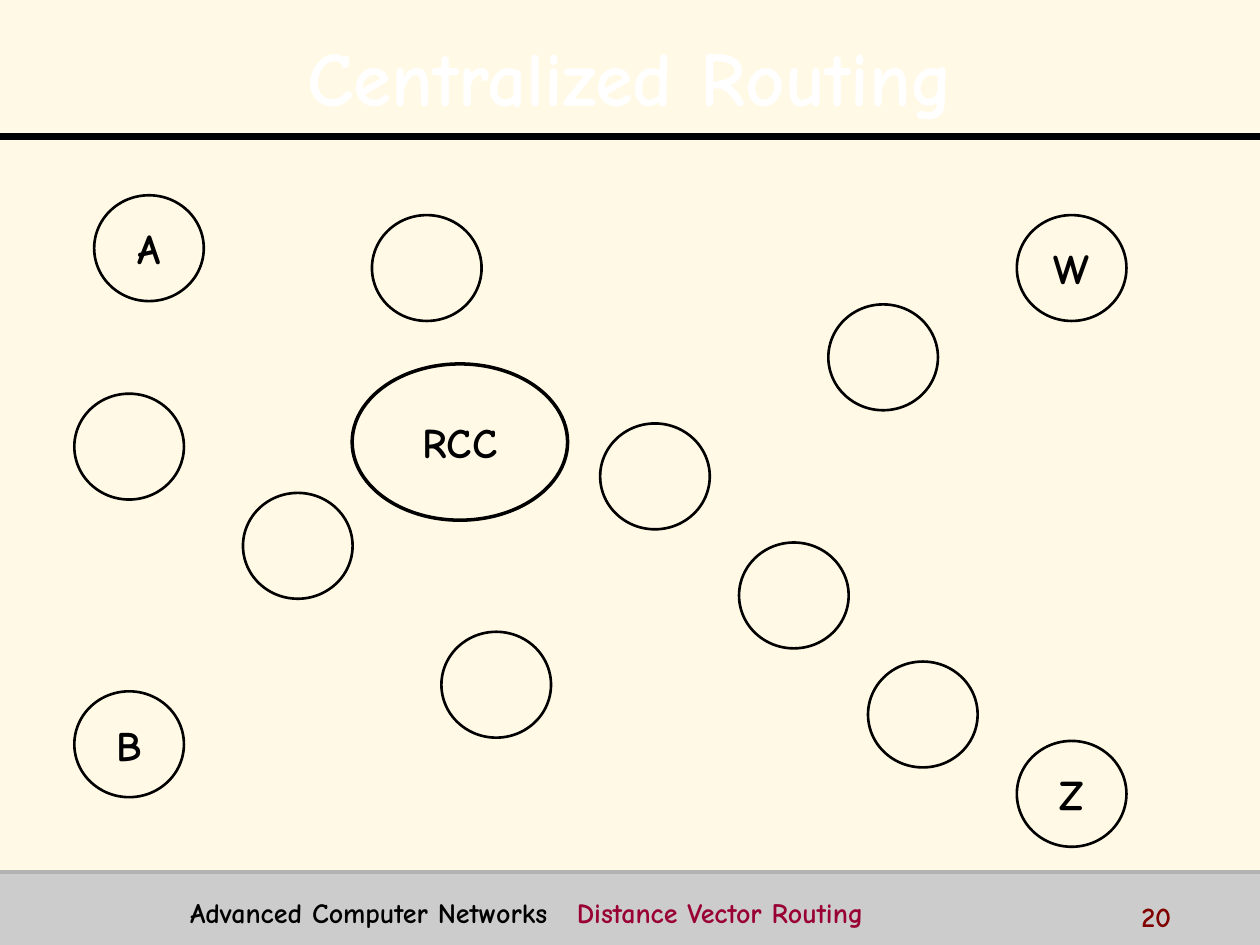
"""Build the Centralized Routing slide."""
from lxml import etree
from pptx import Presentation
from pptx.dml.color import RGBColor
from pptx.enum.shapes import MSO_CONNECTOR, MSO_SHAPE
from pptx.enum.text import MSO_ANCHOR, PP_ALIGN
from pptx.oxml.ns import qn
from pptx.util import Inches, Pt

OVAL, RECT = MSO_SHAPE.OVAL, MSO_SHAPE.RECTANGLE
LINE = MSO_CONNECTOR.STRAIGHT
MID, MIDDLE = PP_ALIGN.CENTER, MSO_ANCHOR.MIDDLE

WIDE, HIGH = 10, 7.5
STEP = WIDE / 127
LEFT, TOP = 0.59, 1.55
FONT = "Comic Neue"
COLORS = {
    "back": "FFF9E6", "band": "CCCCCC", "edge": "B2B2B2", "ink": "000000",
    "title": "FFFFFF", "topic": "990033", "page": "800000",
}

TITLE = "Centralized Routing"
COURSE, TOPIC, PAGE = "Advanced Computer Networks", "Distance Vector Routing", "20"
HUB = ("RCC", 28, 17)
NODES = [
    ("A", 2, 0), ("Z", 95, 55), ("W", 95, 2), ("", 80, 47), ("", 67, 35),
    ("B", 0, 50), ("", 76, 11), ("", 53, 23), ("", 17, 30), ("", 30, 2),
    ("", 0, 20), ("", 37, 44),
]
RULES = [(1.08, "ink", 4), (6.92, "edge", 2)]


def color(name):
    return RGBColor.from_string(COLORS[name])


def place(*sizes):
    return [Inches(size) for size in sizes]


def style(font, size, name):
    for key, value in {"name": FONT, "size": Pt(size), "bold": True}.items():
        setattr(font, key, value)
    font.color.rgb = color(name)


def write(par, text, size, name):
    run = par.add_run()
    run.text = text
    style(run.font, size, name)
    return run


def oval(slide, node, width, height, weight):
    label, col, row = node
    shape = slide.shapes.add_shape(
        OVAL, *place(LEFT + col * STEP, TOP + row * STEP, width, height))
    shape.shadow.inherit = False
    shape.fill.background()
    shape.line.color.rgb = color("ink")
    shape.line.width = Pt(weight)
    if label:
        frame = shape.text_frame
        frame.word_wrap = False
        frame.vertical_anchor = MIDDLE
        par = frame.paragraphs[0]
        par.alignment = MID
        write(par, label, 24, "ink")


def rule(slide, y, name, weight):
    line = slide.shapes.add_connector(LINE, *place(0, y, WIDE, y))
    line.line.color.rgb = color(name)
    line.line.width = Pt(weight)
    etree.SubElement(line._element.spPr, qn("a:effectLst"))


def band(slide):
    y = RULES[1][0]
    shape = slide.shapes.add_shape(RECT, *place(0, y, WIDE, HIGH - y))
    shape.shadow.inherit = False
    shape.fill.solid()
    shape.fill.fore_color.rgb = color("band")
    shape.line.fill.background()


def head(slide):
    title = slide.shapes.title
    spots = place(0.2, 0.13, 9.61, 0.87)
    for key, value in zip(("left", "top", "width", "height"), spots):
        setattr(title, key, value)
    title.text_frame.vertical_anchor = MIDDLE
    par = title.text_frame.paragraphs[0]
    par.alignment = MID
    par.line_spacing = 1.1
    run = write(par, TITLE, 44, "title")
    effect = etree.Element(qn("a:effectLst"))
    shade = etree.SubElement(
        effect, qn("a:outerShdw"), dist="35921", dir="2700000")
    etree.SubElement(shade, qn("a:srgbClr"), val=COLORS["ink"])
    run.font._element.find(qn("a:solidFill")).addnext(effect)


def note(slide, spot):
    frame = slide.shapes.add_textbox(*place(*spot)).text_frame
    frame.word_wrap = True
    return frame.paragraphs[0]


def foot(slide):
    par = note(slide, (1.41, 7.06, 7.28, 0.31))
    tabs = etree.SubElement(par._p.get_or_add_pPr(), qn("a:tabLst"))
    etree.SubElement(tabs, qn("a:tab"), pos=str(Inches(3.07)), algn="l")
    write(par, COURSE + "\t", 16, "ink")
    write(par, TOPIC, 16, "topic")
    write(note(slide, (8.96, 7.09, 1, 0.25)), PAGE, 16, "page")


def main():
    deck = Presentation()
    deck.slide_width, deck.slide_height = place(WIDE, HIGH)
    slide = deck.slides.add_slide(deck.slide_layouts[5])
    fill = slide.background.fill
    fill.solid()
    fill.fore_color.rgb = color("back")
    band(slide)
    for item in RULES:
        rule(slide, *item)
    head(slide)
    foot(slide)
    oval(slide, HUB, 1.71, 1.24, 2)
    for node in NODES:
        oval(slide, node, 0.87, 0.84, 1.5)
    deck.save("out.pptx")


if __name__ == "__main__":
    main()
